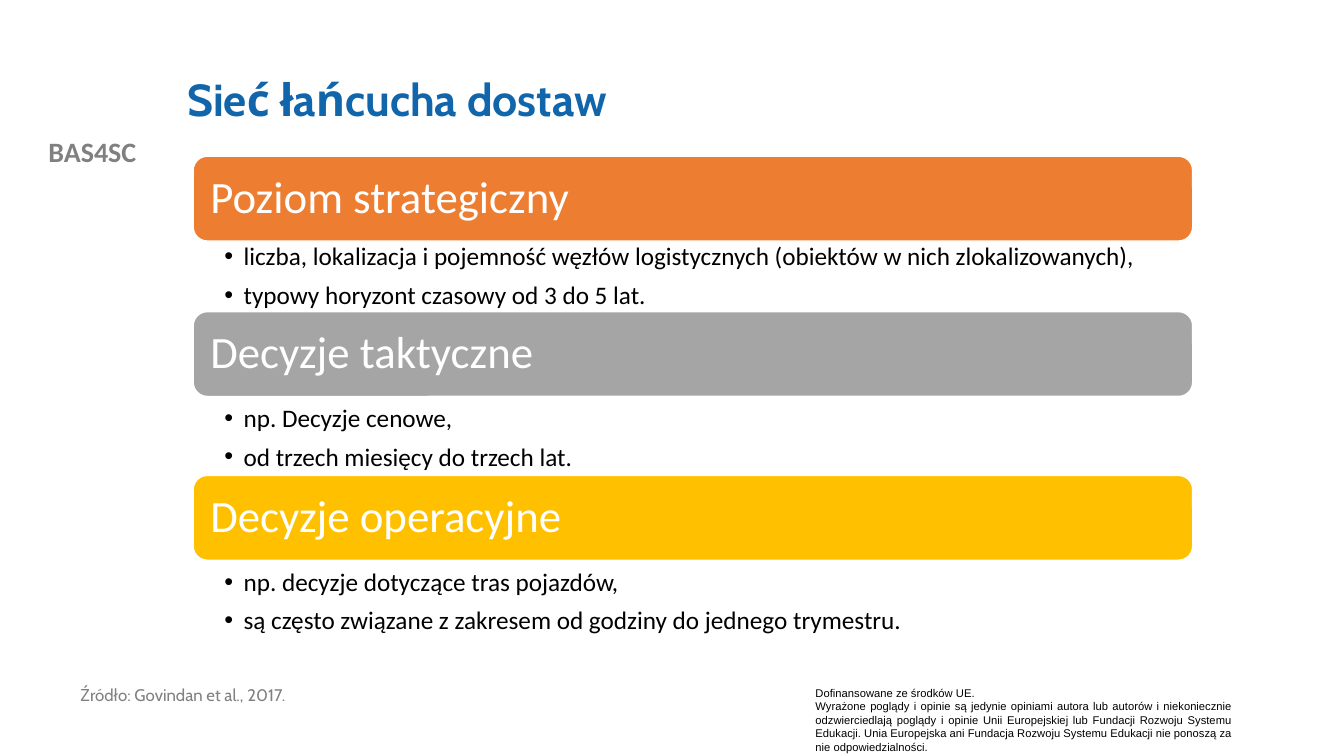
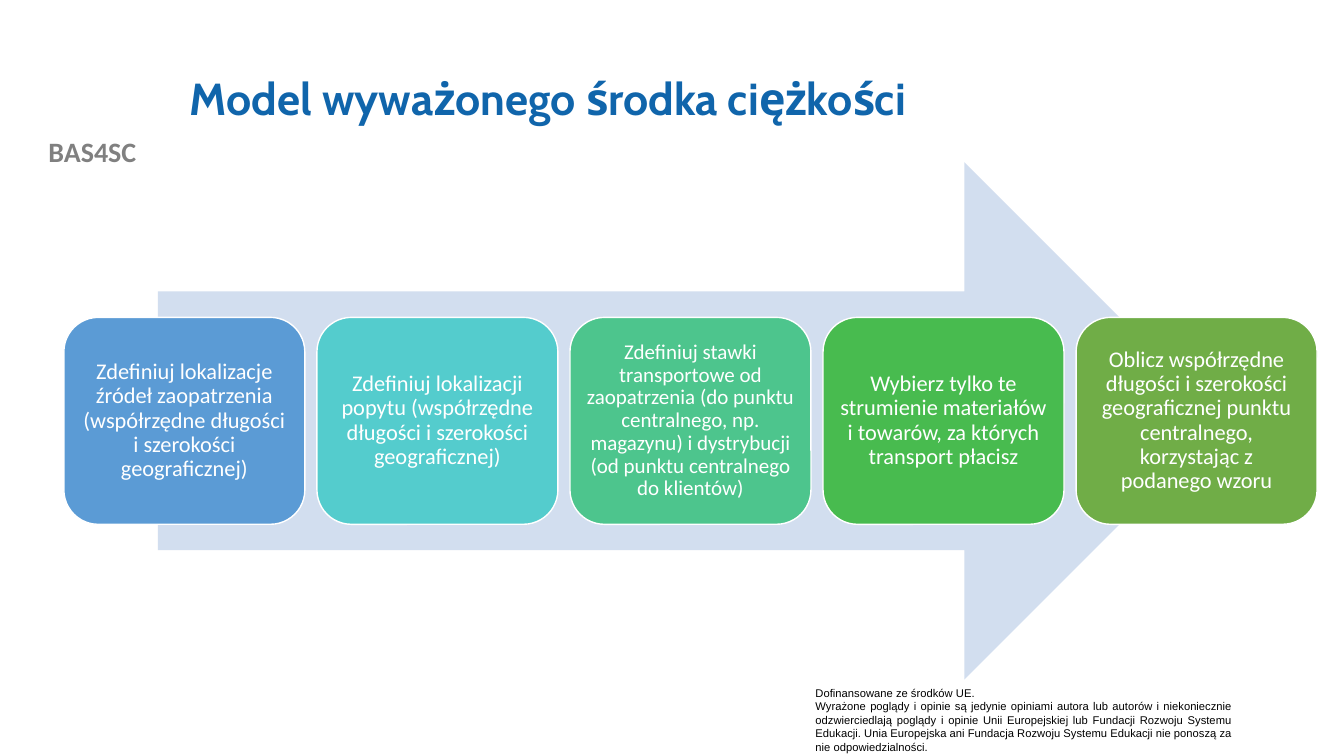
from lxml.etree import SubElement
from pptx import Presentation
from pptx.dml.color import RGBColor
from pptx.enum.shapes import MSO_SHAPE
from pptx.enum.text import MSO_ANCHOR, MSO_AUTO_SIZE, PP_ALIGN
from pptx.oxml.ns import qn
from pptx.util import Inches, Pt

# Grid of 160 columns by 90 rows, in square cells
COLS, ROWS = 160, 90
CELL = Inches(7.5) / ROWS

BLUE, GREY, BLACK, WHITE = "1065AB", "808080", "000000", "FFFFFF"
PALE = "D2DEEF"

TAG = "BAS4SC"
NOTE = [
    "Dofinansowane ze środków UE.",
    "Wyrażone poglądy i opinie są jedynie opiniami autora lub autorów "
    "i niekoniecznie odzwierciedlają poglądy i opinie Unii Europejskiej "
    "lub Fundacji Rozwoju Systemu Edukacji. Unia Europejska ani Fundacja "
    "Rozwoju Systemu Edukacji nie ponoszą za nie odpowiedzialności.",
]

# Heading, colour, list height in rows, items with their line spacing
LEVELS = [
    ("Poziom strategiczny", "ED7D31", 8.4, [
        ("liczba, lokalizacja i pojemność węzłów logistycznych "
         "(obiektów w nich zlokalizowanych),", 0.9),
        ("typowy horyzont czasowy od 3 do 5 lat.", 1.1)]),
    ("Decyzje taktyczne", "A5A5A5", 9.4, [
        ("np. Decyzje cenowe,", 1.1),
        ("od trzech miesięcy do trzech lat.", 1.1)]),
    ("Decyzje operacyjne", "FFC000", 10.3, [
        ("np. decyzje dotyczące tras pojazdów,", 1.1),
        ("są często związane z zakresem od godziny do jednego trymestru.",
         1.1)]),
]

# Text, colour, text size
STEPS = [
    ("Zdefiniuj lokalizacje źródeł zaopatrzenia (współrzędne długości "
     "i szerokości geograficznej)", "5B9BD5", 16),
    ("Zdefiniuj lokalizacji popytu (współrzędne długości i szerokości "
     "geograficznej)", "54CCCD", 16),
    ("Zdefiniuj stawki transportowe od zaopatrzenia (do punktu centralnego, "
     "np. magazynu) i dystrybucji (od punktu centralnego do klientów)",
     "4DC58D", 15),
    ("Wybierz tylko te strumienie materiałów i towarów, za których "
     "transport płacisz", "48BB4F", 16),
    ("Oblicz współrzędne długości i szerokości geograficznej punktu "
     "centralnego, korzystając z podanego wzoru", "70AD47", 16),
]


def color(code):
    return RGBColor.from_string(code)


def grid(*cells):
    return [round(n * CELL) for n in cells]


def place(shape, *box):
    shape.left, shape.top, shape.width, shape.height = grid(*box)


def inset(frame, left, top, right, bottom):
    frame.margin_left, frame.margin_top = Inches(left), Inches(top)
    frame.margin_right, frame.margin_bottom = Inches(right), Inches(bottom)


def style(par, font, size, code, bold=False, align=PP_ALIGN.LEFT, line=1.0):
    par.alignment, par.line_spacing = align, line
    par.space_before = Pt(0)
    face = par.font
    face.name, face.size, face.bold = font, Pt(size), bold
    face.color.rgb = color(code)


def write(frame, lines, *look, **more):
    frame.word_wrap = True
    frame.text = "\n".join(lines)
    for par in frame.paragraphs:
        style(par, *look, **more)


def label(slide, box, lines, *look, **more):
    text = slide.shapes.add_textbox(*grid(*box))
    write(text.text_frame, lines, *look, **more)
    return text


def block(slide, kind, box, fill, edge=None):
    shape = slide.shapes.add_shape(kind, *grid(*box))
    shape.shadow.inherit = False
    shape.fill.solid()
    shape.fill.fore_color.rgb = color(fill)
    if edge:
        shape.line.color.rgb = color(edge)
        shape.line.width = Pt(1)
    else:
        shape.line.fill.background()
    return shape


def panel(slide, box, fill, text, size, pad, align):
    """Rounded white-edged box with one text."""
    shape = block(slide, MSO_SHAPE.ROUNDED_RECTANGLE, box, fill, WHITE)
    frame = shape.text_frame
    write(frame, [text], "Calibri", size, WHITE, align=align, line=0.9)
    frame.vertical_anchor = MSO_ANCHOR.MIDDLE
    inset(frame, pad, pad, pad, pad)


def heading(slide, text, *box):
    title = slide.shapes.title
    place(title, *box)
    frame = title.text_frame
    write(frame, [text], "Cabin", 32, BLUE, bold=True, line=0.9)
    frame.vertical_anchor = MSO_ANCHOR.MIDDLE
    frame.auto_size = MSO_AUTO_SIZE.NONE


def brand(deck, slide):
    """Put the tag and the funding note on the master."""
    tag = label(slide, (0, 15.4, 22, 5.3), [TAG], "Calibri", 20, GREY,
                bold=True, align=PP_ALIGN.CENTER)
    note = label(slide, (95.9, 81.1, 52, 9.2), NOTE, "Arial", 8, BLACK,
                 align=PP_ALIGN.JUSTIFY)
    for num, part in enumerate((tag, note), 20):
        part.element.nvSpPr.cNvPr.set("id", str(num))
        deck.slide_master.shapes.element.append(part.element)


def bullets(body, box, items):
    place(body, *box)
    frame = body.text_frame
    frame.text = "\n".join(text for text, line in items)
    frame.word_wrap = True
    frame.auto_size = MSO_AUTO_SIZE.NONE
    frame.vertical_anchor = MSO_ANCHOR.TOP
    inset(frame, 0.31, 0.03, 0.14, 0.03)
    for par, (text, line) in zip(frame.paragraphs, items):
        props = par._p.get_or_add_pPr()
        props.set("marL", str(Inches(0.19)))
        props.set("indent", str(-Inches(0.19)))
        SubElement(props, qn("a:buChar")).set("char", "•")
        style(par, "Calibri", 18, BLACK, line=line)
        par.space_after = Pt(3.6)


def levels(slide, left, top, width, bar=10.1):
    """Stack of heading bars, each with its list below."""
    bodies = [p for p in slide.placeholders if p.placeholder_format.idx > 0]
    for body, (head, fill, tall, items) in zip(bodies, LEVELS):
        panel(slide, (left, top, width, bar), fill, head, 32, 0.13,
              PP_ALIGN.LEFT)
        bullets(body, (left, top + bar, width, tall), items)
        top += bar + tall
    for spare in bodies[len(LEVELS):]:
        spare.element.getparent().remove(spare.element)


def steps(slide, left, top, width, height):
    """Row of cards over the middle of a wide arrow."""
    block(slide, MSO_SHAPE.RIGHT_ARROW,
          (left + 0.075 * width, top, 0.85 * width, height), PALE)
    gap = 0.05
    count = len(STEPS)
    wide = width / (count + gap * (count - 1))
    for col, (text, fill, size) in enumerate(STEPS):
        box = (left + col * wide * (1 + gap), top + 0.3 * height,
               wide, 0.4 * height)
        panel(slide, box, fill, text, size, 0.07 if size > 15 else 0.06,
              PP_ALIGN.CENTER)


def main():
    deck = Presentation()
    deck.slide_width, deck.slide_height = grid(COLS, ROWS)

    # Decision levels, on the layout with several bodies
    first = deck.slides.add_slide(deck.slide_layouts.get_by_name("Comparison"))
    brand(deck, first)
    heading(first, "Sieć łańcucha dostaw", 21.1, 4.8, 128, 14.6)
    levels(first, 23, 18.6, 119)
    label(first, (8.4, 80.9, 80, 3.6), ["Źródło: Govindan et al., 2017."],
          "Cabin", 12, GREY)

    # Steps of the model
    second = deck.slides.add_slide(deck.slide_layouts.get_by_name("Title Only"))
    heading(second, "Model wyważonego środka ciężkości", 21.4, 4.7, 128, 14.6)
    steps(second, 7.6, 19.3, 149.2, 61.6)

    deck.save("out.pptx")


if __name__ == "__main__":
    main()
